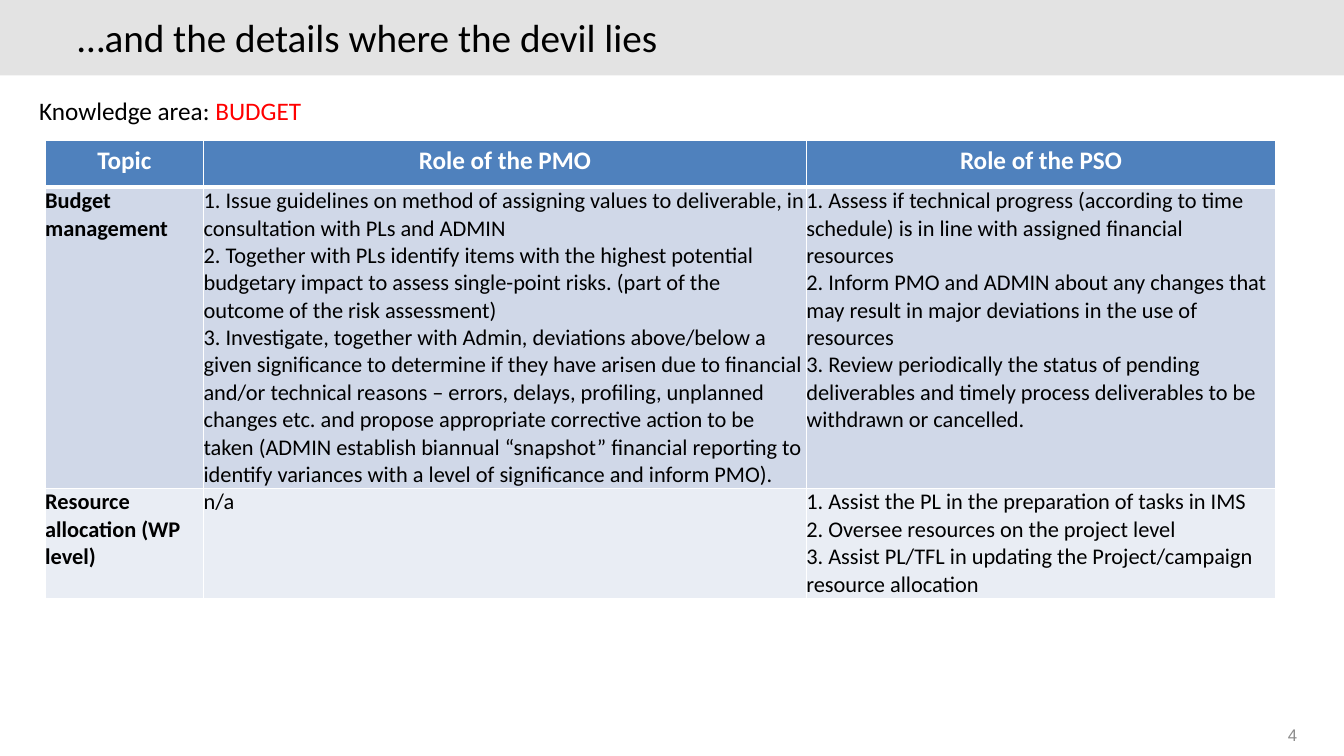
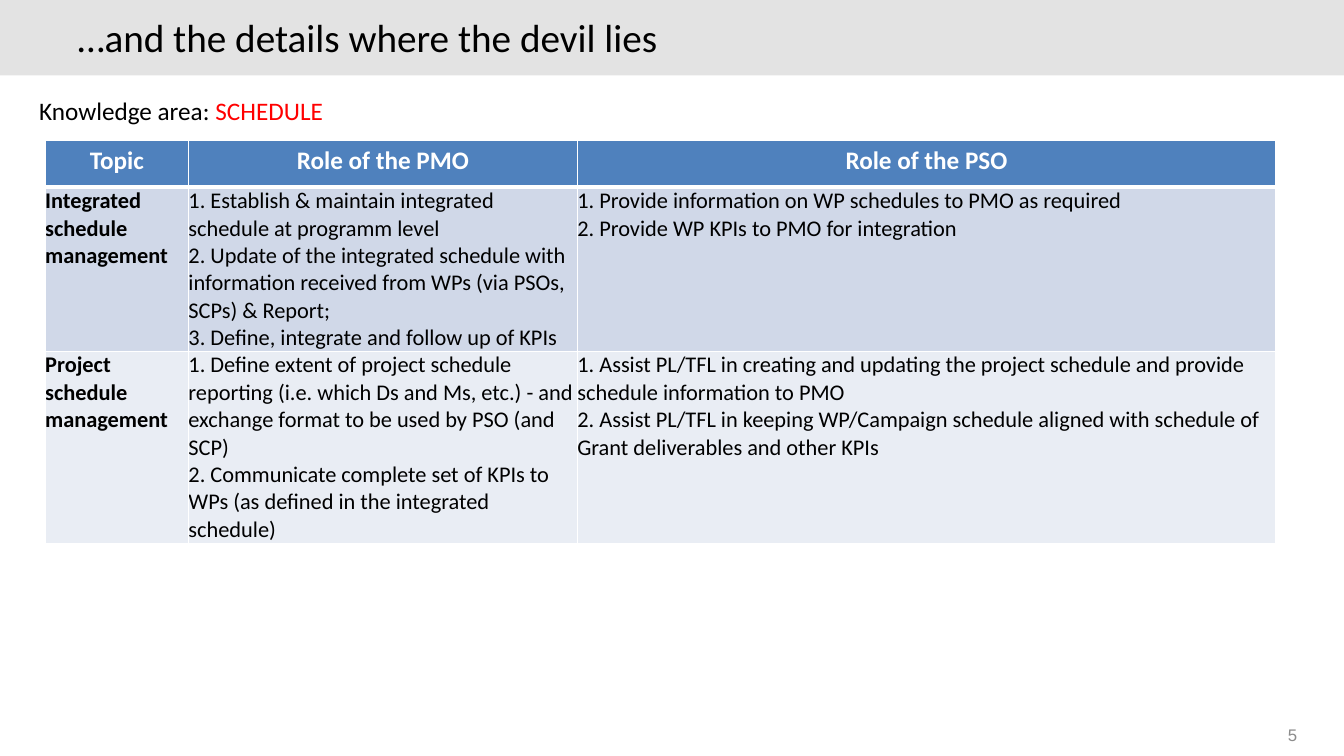
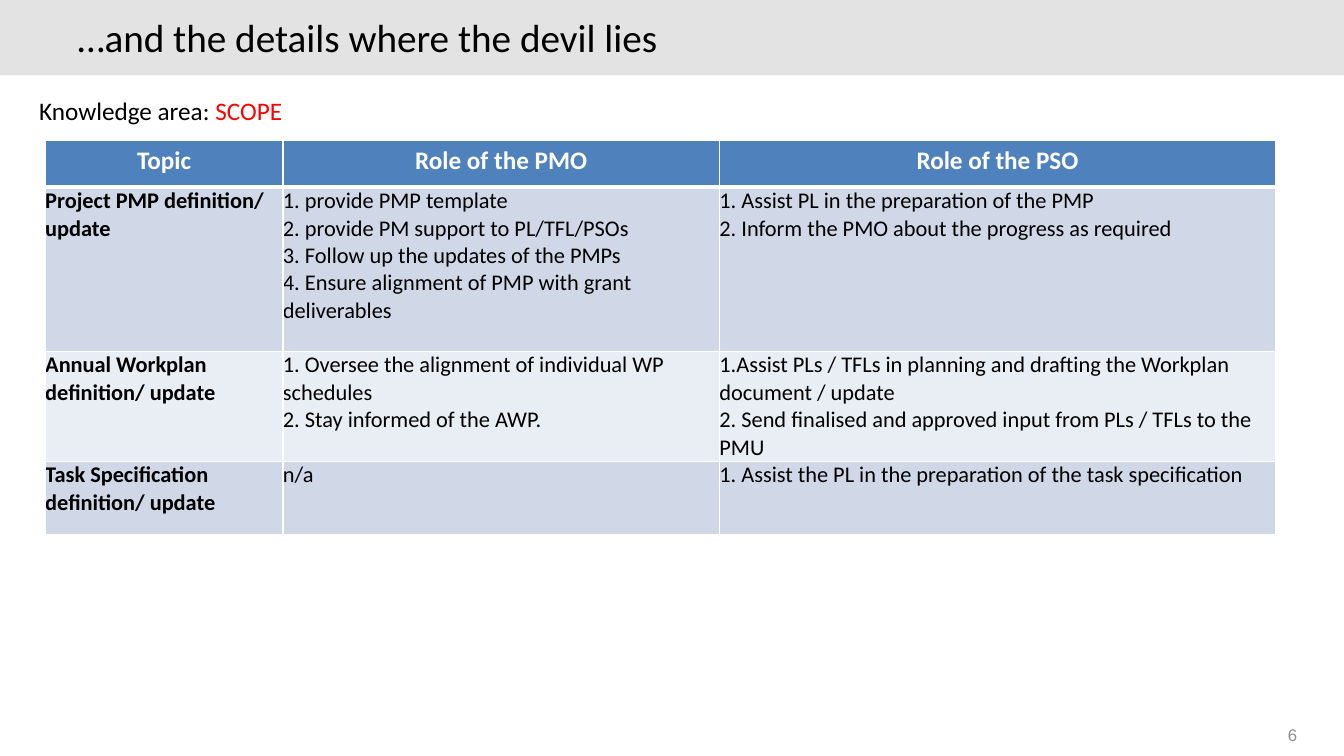
from lxml.etree import SubElement
from pptx import Presentation
from pptx.dml.color import RGBColor
from pptx.enum.shapes import MSO_SHAPE
from pptx.enum.text import MSO_ANCHOR, PP_ALIGN
from pptx.oxml.ns import qn
from pptx.util import Cm, Pt

COLORS = {
    "band": "E3E3E3", "black": "000000", "white": "FFFFFF", "red": "FF0000",
    "grey": "8C8C8C", "head": "4F81BD", "odd": "D0D8E8", "even": "E9EDF4",
}
HEADS = ["Topic", "Role of the PMO", "Role of the PSO"]
WIDTH = 31.01
PAGES = [
    ("BUDGET", [3.99, 15.19], [7.59, 2.77], [
        (["Budget management"],
         ["1. Issue guidelines on method of assigning values to deliverable, in consultation with PLs and ADMIN",
          "2. Together with PLs identify items with the highest potential budgetary impact to assess "
          "single-point risks. (part of the outcome of the risk assessment)",
          "3. Investigate, together with Admin, deviations above/below a given significance to determine if "
          "they have arisen due to financial and/or technical reasons – errors, delays, profiling, unplanned "
          "changes etc. and propose appropriate corrective action to be taken (ADMIN establish biannual "
          "“snapshot” financial reporting to identify variances with a level of significance and inform PMO)."],
         ["1. Assess if technical progress (according to time schedule) is in line with assigned financial resources",
          "2. Inform PMO and ADMIN about any changes that may result in major deviations in the use of resources",
          "3. Review periodically the status of pending deliverables and timely process deliverables to be "
          "withdrawn or cancelled."]),
        (["Resource allocation (WP level)"],
         ["n/a"],
         ["1. Assist the PL in the preparation of tasks in IMS",
          "2. Oversee resources on the project level",
          "3. Assist PL/TFL in updating the Project/campaign resource allocation"]),
    ]),
    ("SCHEDULE", [3.61, 9.8], [4.14, 4.83], [
        (["Integrated schedule management"],
         ["1. Establish & maintain integrated schedule at programm level",
          "2. Update of the integrated schedule with information received from WPs (via PSOs, SCPs) & Report;",
          "3. Define, integrate and follow up of KPIs"],
         ["1. Provide information on WP schedules to PMO as required",
          "2. Provide WP KPIs to PMO for integration"]),
        (["Project schedule management"],
         ["1. Define extent of project schedule reporting (i.e. which Ds and Ms, etc.) - and exchange format "
          "to be used by PSO (and SCP)",
          "2. Communicate complete set of KPIs to WPs (as defined in the integrated schedule)"],
         ["1. Assist PL/TFL in creating and updating the project schedule and provide schedule information to PMO",
          "2. Assist PL/TFL in keeping WP/Campaign schedule aligned with schedule of Grant deliverables and "
          "other KPIs"]),
    ]),
    ("SCOPE", [5.99, 11], [4.14, 2.77, 1.83], [
        (["Project PMP definition/ update"],
         ["1. provide PMP template",
          "2. provide PM support to PL/TFL/PSOs",
          "3. Follow up the updates of the PMPs",
          "4. Ensure alignment of PMP with grant deliverables"],
         ["1. Assist PL in the preparation of the PMP",
          "2. Inform the PMO about the progress as required"]),
        (["Annual Workplan definition/ update"],
         ["1. Oversee the alignment of individual WP schedules",
          "2. Stay informed of the AWP."],
         ["1.Assist PLs / TFLs in planning and drafting the Workplan document / update",
          "2. Send finalised and approved input from PLs / TFLs to the PMU"]),
        (["Task Specification definition/ update"],
         ["n/a"],
         ["1. Assist the PL in the preparation of the task specification"]),
    ]),
]


def write(para, text, size, color, bold=False, face="Calibri"):
    run = para.add_run()
    run.text = text
    run.font.name = face
    run.font.size = Pt(size)
    run.font.bold = bold
    run.font.color.rgb = RGBColor.from_string(COLORS[color])


def edge(cell, side, width):
    line = SubElement(cell._tc.get_or_add_tcPr(), qn("a:" + side), w=str(Pt(width)))
    fill = SubElement(line, qn("a:solidFill"))
    SubElement(fill, qn("a:srgbClr"), val=COLORS["white"])


deck = Presentation()
deck.slide_width = Cm(33.87)
deck.slide_height = Cm(19.05)
layout = deck.slide_layouts[5]

for page, (area, cols, heights, body) in enumerate(PAGES, 4):
    slide = deck.slides.add_slide(layout)
    shapes = slide.shapes

    band = shapes.add_shape(MSO_SHAPE.RECTANGLE, 0, 0, deck.slide_width, Cm(1.9))
    band.shadow.inherit = False
    band.fill.solid()
    band.fill.fore_color.rgb = RGBColor.from_string(COLORS["band"])
    band.line.fill.background()
    shapes.element.insert(2, band.element)

    title = shapes.title
    title.left, title.top, title.width, title.height = Cm(1.7), Cm(0.33), Cm(27.94), Cm(1.27)
    title.text_frame.vertical_anchor = MSO_ANCHOR.MIDDLE
    para = title.text_frame.paragraphs[0]
    para.alignment = PP_ALIGN.LEFT
    para.line_spacing = Pt(32)
    write(para, "…and the details where the devil lies", 28, "black")

    number = shapes.add_textbox(Cm(30.94), Cm(18.14), Cm(2), Cm(0.56))
    number.text_frame.word_wrap = True
    para = number.text_frame.paragraphs[0]
    para.alignment = PP_ALIGN.RIGHT
    write(para, str(page), 12, "grey", face="Arial")

    rows = [[[head] for head in HEADS], *body]
    frame = shapes.add_table(len(rows), len(HEADS), Cm(1.14), Cm(3.53),
                             Cm(WIDTH), Cm(1.19 + sum(heights)))
    table = frame.table
    for col, width in zip(table.columns, [*cols, WIDTH - sum(cols)]):
        col.width = Cm(width)
    for row, height in zip(table.rows, [1.19, *heights]):
        row.height = Cm(height)
    for r, row in enumerate(rows):
        for c, lines in enumerate(row):
            cell = table.cell(r, c)
            edge(cell, "lnL", 1)
            edge(cell, "lnR", 1)
            edge(cell, "lnT", 3 if r == 1 else 1)
            edge(cell, "lnB", 3 if r == 0 else 1)
            cell.fill.solid()
            tint = "head" if r == 0 else "odd" if r % 2 else "even"
            cell.fill.fore_color.rgb = RGBColor.from_string(COLORS[tint])
            if r:
                cell.margin_left = cell.margin_right = cell.margin_top = cell.margin_bottom = 0
            for i, text in enumerate(lines):
                para = cell.text_frame.add_paragraph() if i else cell.text_frame.paragraphs[0]
                if r:
                    write(para, text, 16, "black", c == 0)
                else:
                    para.alignment = PP_ALIGN.CENTER
                    write(para, text, 18, "white", True)

    label = shapes.add_textbox(Cm(0.74), Cm(2.29), Cm(10.59), Cm(1.02))
    label.text_frame.word_wrap = True
    para = label.text_frame.paragraphs[0]
    write(para, "Knowledge area: ", 18, "black")
    write(para, area, 18, "red")

deck.save("out.pptx")
